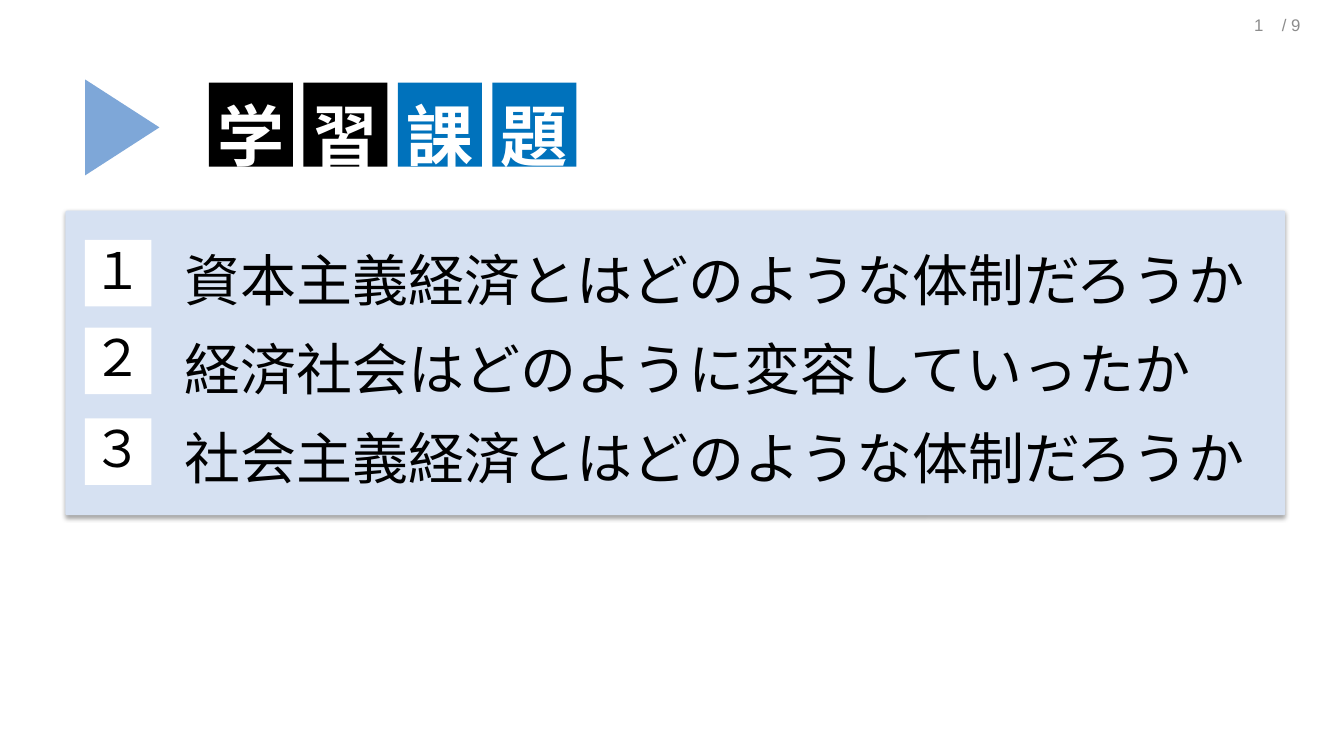
from lxml.etree import SubElement
from pptx import Presentation
from pptx.dml.color import RGBColor
from pptx.enum.shapes import MSO_SHAPE
from pptx.enum.text import MSO_ANCHOR, PP_ALIGN
from pptx.oxml.ns import qn
from pptx.util import Pt

BLACK = RGBColor(0x00, 0x00, 0x00)
WHITE = RGBColor(0xFF, 0xFF, 0xFF)
GRAY = RGBColor(0x8C, 0x8C, 0x8C)
BLUE = RGBColor(0x00, 0x72, 0xBC)
SKY = RGBColor(0x7E, 0xA7, 0xD8)
PALE = RGBColor(0xD6, 0xE1, 0xF2)
SANS = "Noto Sans CJK JP"

TASKS = [
    "資本主義経済とはどのような体制だろうか",
    "経済社会はどのように変容していったか",
    "社会主義経済とはどのような体制だろうか",
]


def set_font(para, size, color, name=SANS, bold=False):
    font = para.font
    font.name, font.size, font.bold = name, Pt(size), bold
    font.color.rgb = color
    props = para._p.pPr.find(qn("a:defRPr"))
    SubElement(props, qn("a:ea"), typeface=name)
    return props


def add_block(slide, kind, left, top, width, height, fill):
    block = slide.shapes.add_shape(
        kind, Pt(left), Pt(top), Pt(width), Pt(height))
    block.shadow.inherit = False
    block.fill.solid()
    block.fill.fore_color.rgb = fill
    block.line.fill.background()
    return block


def add_label(slide, text, left, top, width, height, size, color, name=SANS):
    box = slide.shapes.add_textbox(Pt(left), Pt(top), Pt(width), Pt(height))
    frame = box.text_frame
    frame.word_wrap = False
    para = frame.paragraphs[0]
    para.text = text
    set_font(para, size, color, name)
    return box


def add_page(slide, text, left):
    box = add_label(slide, text, left, 8.3, 224, 19, 12, GRAY, "Arial")
    frame = box.text_frame
    frame.word_wrap = True
    frame.vertical_anchor = MSO_ANCHOR.MIDDLE
    frame.paragraphs[0].alignment = PP_ALIGN.RIGHT


def add_title(slide):
    # One tile behind each letter
    step = 67.5
    for i, fill in enumerate([BLACK, BLACK, BLUE, BLUE]):
        add_block(slide, MSO_SHAPE.RECTANGLE, 149.2 + i * step, 59, 60, 60,
                  fill)

    # The title lies over its tiles, spaced to match them
    title = slide.shapes.title
    slide.shapes._spTree.append(title.element)
    title.left, title.top = Pt(148), Pt(64)
    title.width, title.height = Pt(290), Pt(65.5)
    frame = title.text_frame
    frame.text = "学習課題"
    frame.word_wrap = False
    frame.vertical_anchor = MSO_ANCHOR.TOP
    para = frame.paragraphs[0]
    para.alignment = PP_ALIGN.LEFT
    props = set_font(para, 48, WHITE, bold=True)
    props.set("spc", str(round((step - 48) * 100)))


def add_panel(slide):
    panel = add_block(slide, MSO_SHAPE.ROUNDED_RECTANGLE,
                      46.8, 150.5, 871.2, 217.5, PALE)
    panel.adjustments[0] = 0.005

    # Soft shadow below
    effects = panel._element.spPr.find(qn("a:effectLst"))
    shade = SubElement(effects, qn("a:outerShdw"), blurRad=str(Pt(3.1)),
                       dist=str(Pt(1.8)), dir="5400000", rotWithShape="0")
    color = SubElement(shade, qn("a:srgbClr"), val=str(BLACK))
    SubElement(color, qn("a:alpha"), val="35000")

    # Task lines
    frame = panel.text_frame
    frame.word_wrap = True
    frame.vertical_anchor = MSO_ANCHOR.TOP
    frame.margin_left, frame.margin_right = Pt(85), Pt(14)
    frame.margin_top, frame.margin_bottom = Pt(15), Pt(14)
    frame.text = "\n".join(TASKS)
    for i, para in enumerate(frame.paragraphs):
        para.alignment = PP_ALIGN.LEFT
        para.line_spacing = 1.2
        para.space_before = Pt(6 if i else 0)
        set_font(para, 40, BLACK)


def add_digit(slide, digit, top):
    add_block(slide, MSO_SHAPE.RECTANGLE, 60.6, top, 47.5, 47.5, WHITE)
    add_label(slide, digit, 59, top - 4.3, 51, 51, 36, BLACK)


def main():
    deck = Presentation()
    deck.slide_width, deck.slide_height = Pt(960), Pt(540)
    slide = deck.slides.add_slide(deck.slide_layouts[5])

    # Page count
    add_page(slide, "1", 685.5)
    add_page(slide, "/ 9", 712)

    # Heading
    arrow = add_block(slide, MSO_SHAPE.ISOSCELES_TRIANGLE,
                      53.2, 64.5, 68.4, 53, SKY)
    arrow.rotation = 90
    add_title(slide)

    # Study tasks
    add_panel(slide)
    for digit, top in zip("１２３", [171.4, 234, 298.8]):
        add_digit(slide, digit, top)

    deck.save("out.pptx")


if __name__ == "__main__":
    main()
